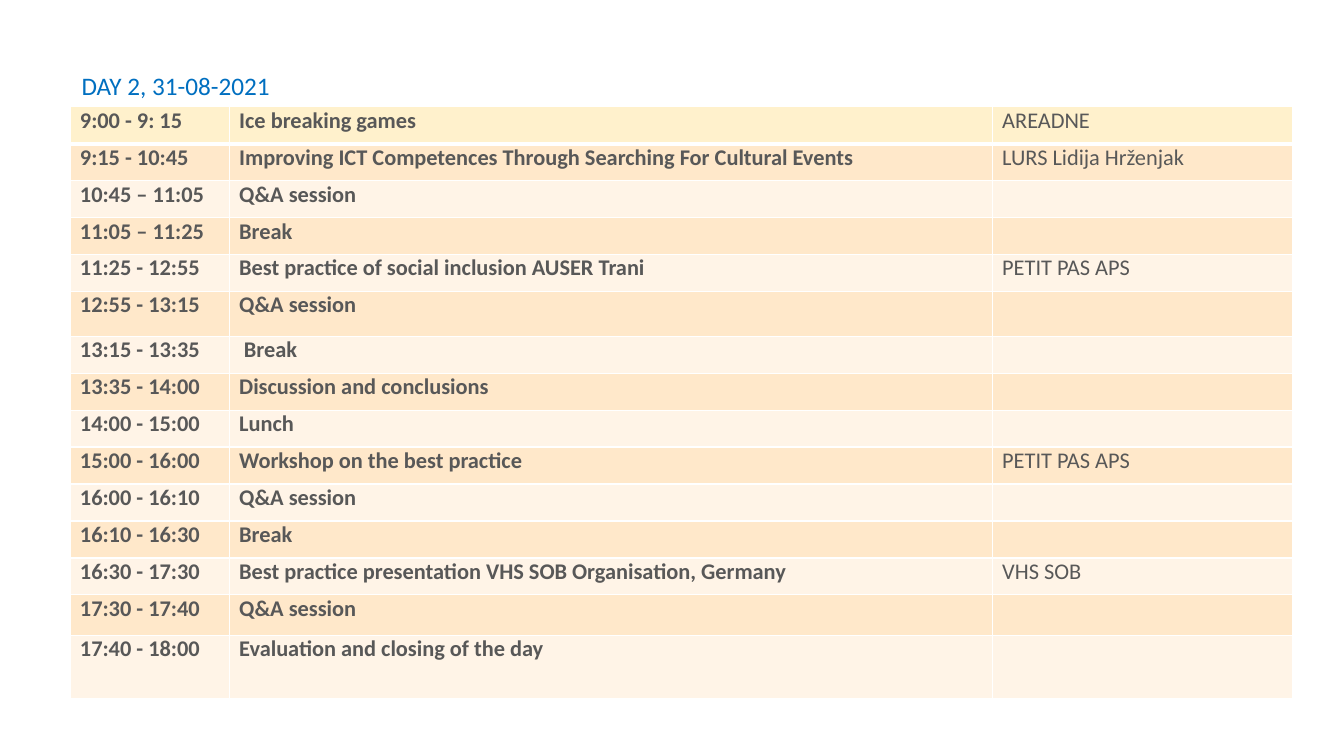
from lxml.etree import SubElement
from pptx import Presentation
from pptx.dml.color import RGBColor
from pptx.oxml.ns import qn
from pptx.util import Pt

TITLE = "DAY 2, 31-08-2021"
AGENDA = [  # time, activity, host
    ("9:00 - 9: 15", "Ice breaking games", "AREADNE"),
    ("9:15 - 10:45", "Improving ICT Competences Through Searching For Cultural Events",
     "LURS Lidija Hrženjak"),
    ("10:45 – 11:05", "Q&A session", ""),
    ("11:05 – 11:25", "Break", ""),
    ("11:25 - 12:55", "Best practice of social inclusion AUSER Trani", "PETIT PAS APS"),
    ("12:55 - 13:15", "Q&A session", ""),
    ("13:15 - 13:35", "Break", ""),
    ("13:35 - 14:00", "Discussion and conclusions", ""),
    ("14:00 - 15:00", "Lunch", ""),
    ("15:00 - 16:00", "Workshop on the best practice", "PETIT PAS APS"),
    ("16:00 - 16:10", "Q&A session", ""),
    ("16:10 - 16:30", "Break", ""),
    ("16:30 - 17:30", "Best practice presentation VHS SOB Organisation, Germany", "VHS SOB"),
    ("17:30 - 17:40", "Q&A session", ""),
    ("17:40 - 18:00", "Evaluation and closing of the day", ""),
]

# Lengths in px, 300 to the inch
PX = 3048
SLIDE_SIZE = (4000, 2250)
TITLE_BOX = (240, 210, 3522, 99)
TABLE_LEFT, TABLE_TOP = 210, 318
COLUMN_WIDTHS = (474, 2271, 891)
ROW_HEIGHT = 110
TALL_ROWS = {5: 133, 13: 120, 14: 190}
INDENT = 28
EXTRA_INDENTS = {(6, 1): 14}

FONT = "Calibri"
TITLE_BLUE = RGBColor(0x00, 0x6F, 0xC0)
TEXT_GREY = RGBColor(0x58, 0x58, 0x58)
WHITE = RGBColor(0xFF, 0xFF, 0xFF)
HEADER_FILL = RGBColor(0xFF, 0xF1, 0xCC)
BAND_FILLS = (RGBColor(0xFF, 0xF4, 0xE7), RGBColor(0xFF, 0xE8, 0xCA))


def style_text(paragraph, text, size, color, bold=False):
    paragraph.text = text
    font = paragraph.font
    font.name, font.size, font.bold = FONT, Pt(size), bold
    font.color.rgb = color


def set_margins(holder, left):
    holder.margin_left = left * PX
    holder.margin_top = holder.margin_right = holder.margin_bottom = 0


def set_borders(cell, widths):
    properties = cell._tc.get_or_add_tcPr()
    for index, (side, width) in enumerate(widths.items()):
        line = SubElement(properties, qn(f"a:{side}"), w=str(Pt(width)))
        fill = SubElement(line, qn("a:solidFill"))
        SubElement(fill, qn("a:srgbClr"), val=str(WHITE))
        properties.insert(index, line)


presentation = Presentation()
presentation.slide_width, presentation.slide_height = (n * PX for n in SLIDE_SIZE)
slide = presentation.slides.add_slide(presentation.slide_layouts[6])

# Day title
title_frame = slide.shapes.add_textbox(*(n * PX for n in TITLE_BOX)).text_frame
title_frame.word_wrap = True
set_margins(title_frame, 3)
style_text(title_frame.paragraphs[0], TITLE, 18, TITLE_BLUE)

# Agenda table
row_heights = [TALL_ROWS.get(row, ROW_HEIGHT) for row in range(len(AGENDA))]
table = slide.shapes.add_table(
    len(AGENDA), len(COLUMN_WIDTHS), TABLE_LEFT * PX, TABLE_TOP * PX,
    sum(COLUMN_WIDTHS) * PX, sum(row_heights) * PX).table
table.first_row = table.horz_banding = False
for column, width in zip(table.columns, COLUMN_WIDTHS):
    column.width = width * PX

for row, entry in enumerate(AGENDA):
    table.rows[row].height = row_heights[row] * PX
    for column, text in enumerate(entry):
        cell = table.cell(row, column)
        set_margins(cell, INDENT + EXTRA_INDENTS.get((row, column), 0))
        cell.fill.solid()
        cell.fill.fore_color.rgb = HEADER_FILL if row == 0 else BAND_FILLS[row % 2]
        set_borders(cell, {"lnL": 1, "lnR": 1, "lnT": 3 if row == 1 else 1,
                           "lnB": 3 if row == 0 else 1})
        if text:
            style_text(cell.text_frame.paragraphs[0], text, 16, TEXT_GREY, bold=column < 2)

presentation.save("out.pptx")
